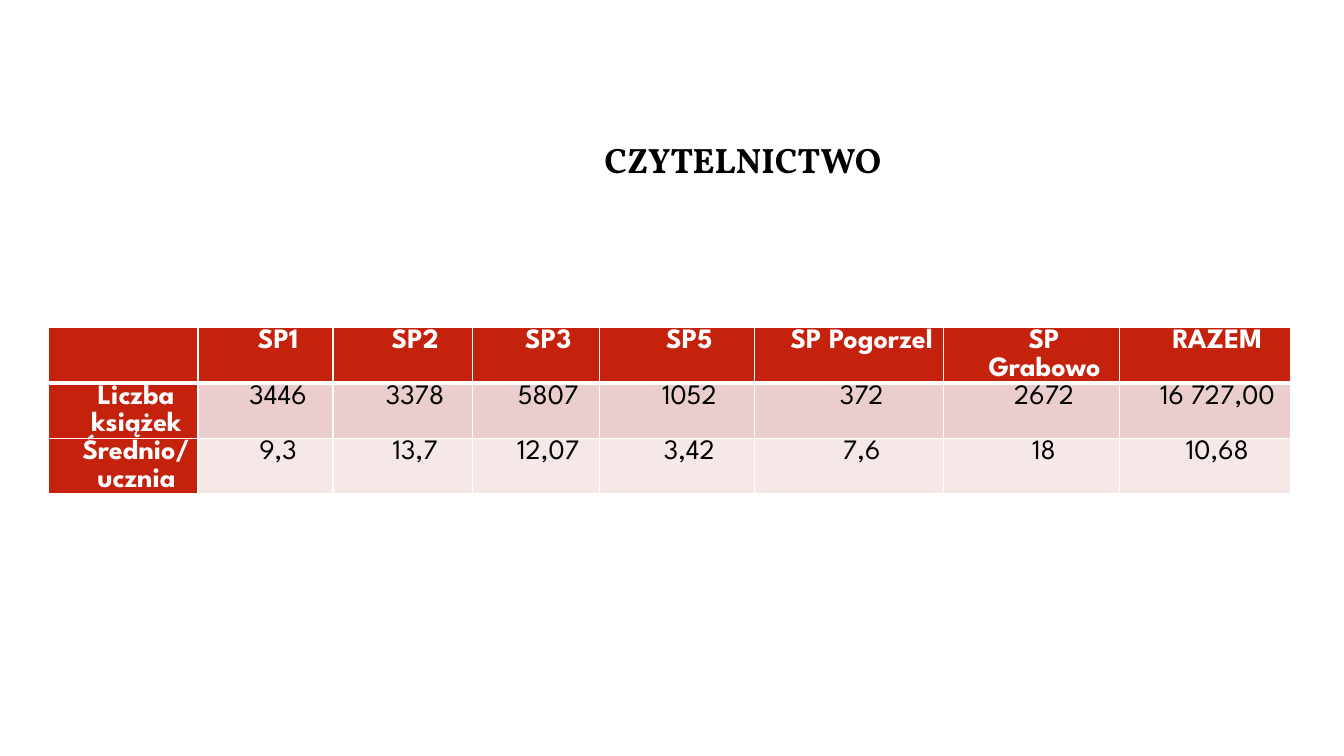
from pptx import Presentation
from pptx.dml.color import RGBColor
from pptx.enum.text import MSO_ANCHOR, PP_ALIGN
from pptx.oxml import parse_xml
from pptx.oxml.ns import nsdecls
from pptx.util import Pt

WHITE, BLACK, RED = "FFFFFF", "000000", "C4220D"
BAND_FILLS = ["EACDCC", "F5E8E7"]
COLUMN_WIDTHS = [106.56, 96.48, 99.36, 90.72, 110.88, 135.36, 125.28, 122.4]
READERSHIP = [
    ["", "SP1", "SP2", "SP3", "SP5", "SP Pogorzel", "SP Grabowo", "RAZEM"],
    ["Liczba książek", "3446", "3378", "5807", "1052", "372", "2672", "16 727,00"],
    ["Średnio/ucznia", "9,3", "13,7", "12,07", "3,42", "7,6", "18", "10,68"],
]


def color(hex_code):
    """Turn a hex string into a colour."""
    return RGBColor.from_string(hex_code)


def format_paragraph(paragraph, font_name, size, hex_code, bold, spacing):
    """Centre a paragraph and set its font and line spacing."""
    paragraph.alignment = PP_ALIGN.CENTER
    paragraph.line_spacing = spacing
    font = paragraph.font
    font.name, font.size, font.bold = font_name, Pt(size), bold
    font.color.rgb = color(hex_code)


def add_borders(cell, row):
    """Draw white cell borders, thicker below the header row."""
    widths = {"L": 1, "R": 1, "T": 3 if row == 1 else 1, "B": 3 if row == 0 else 1}
    properties = cell._tc.get_or_add_tcPr()
    for side, width in widths.items():
        properties.append(parse_xml(
            f'<a:ln{side} {nsdecls("a")} w="{Pt(width)}"><a:solidFill>'
            f'<a:srgbClr val="{WHITE}"/></a:solidFill></a:ln{side}>'))


def fill_cell(cell, label, row, column):
    """Write and format one table cell."""
    heading = row == 0 or column == 0
    cell.margin_left = cell.margin_right = Pt(5)
    cell.margin_top = cell.margin_bottom = 0
    add_borders(cell, row)
    cell.fill.solid()
    cell.fill.fore_color.rgb = color(RED if heading else BAND_FILLS[row - 1])
    cell.text = label
    paragraph = cell.text_frame.paragraphs[0]
    indents = paragraph._p.get_or_add_pPr()
    indents.set("marL", str(Pt(18.7)))
    indents.set("indent", str(Pt(-0.7)))
    format_paragraph(paragraph, "League Spartan", 20, WHITE if heading else BLACK, heading, 1.07)
    paragraph.space_after = Pt(11.8)


def add_heading(slide, left, top, width, height):
    """Place the slide title in its box."""
    heading = slide.shapes.title
    heading.left, heading.top = Pt(left), Pt(top)
    heading.width, heading.height = Pt(width), Pt(height)
    heading.text_frame.text = "CZYTELNICTWO"
    heading.text_frame.vertical_anchor = MSO_ANCHOR.MIDDLE
    format_paragraph(heading.text_frame.paragraphs[0], "Vollkorn", 25.2, BLACK, True, 0.9)


def add_readership_table(slide, left, top, width, height):
    """Place the readership table in its box."""
    table = slide.shapes.add_table(
        len(READERSHIP), len(COLUMN_WIDTHS), Pt(left), Pt(top), Pt(width), Pt(height)).table
    table.first_row = table.horz_banding = False
    for column, column_width in zip(table.columns, COLUMN_WIDTHS):
        column.width = Pt(column_width)
    for row, labels in enumerate(READERSHIP):
        for column, label in enumerate(labels):
            fill_cell(table.cell(row, column), label, row, column)


def main():
    """Build and save the slide."""
    deck = Presentation()
    deck.slide_width, deck.slide_height = Pt(960), Pt(540)
    slide = deck.slides.add_slide(deck.slide_layouts[5])
    add_heading(slide, 408.24, 87.12, 244.8, 57.6)
    add_readership_table(slide, 34.9, 233.9, sum(COLUMN_WIDTHS), 118)
    deck.save("out.pptx")


if __name__ == "__main__":
    main()
